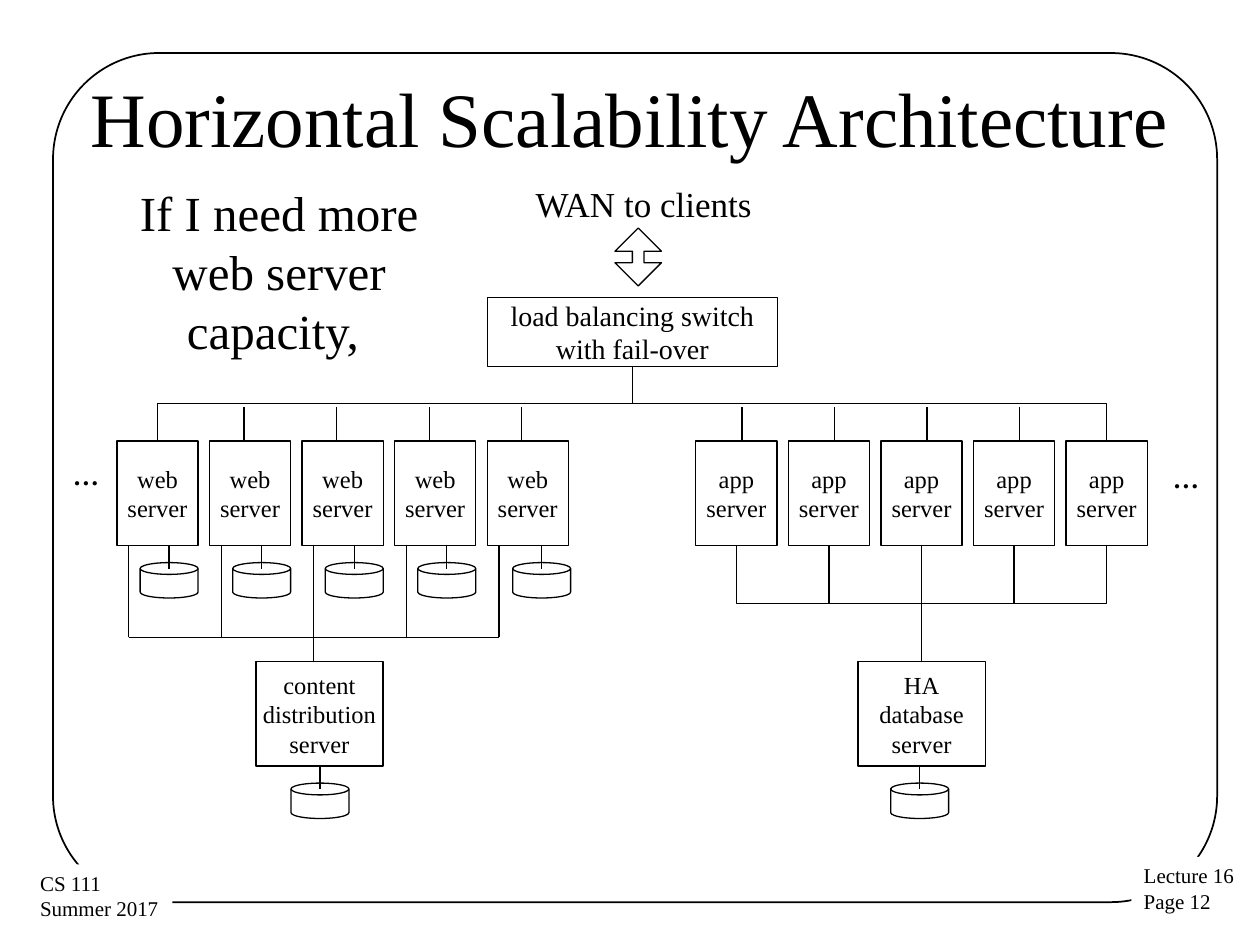
import pptx
import pptx.dml.color
import pptx.enum.shapes
import pptx.enum.text
import pptx.oxml.ns
import pptx.util
import lxml.etree
from dataclasses import dataclass

Pt = pptx.util.Pt
SHAPE = pptx.enum.shapes.MSO_SHAPE
CONNECTOR = pptx.enum.shapes.MSO_CONNECTOR
ALIGN = pptx.enum.text.PP_ALIGN
ANCHOR = pptx.enum.text.MSO_ANCHOR


@dataclass(frozen=True)
class Theme:
    font: str = "Times New Roman"
    ink: pptx.dml.color.RGBColor = pptx.dml.color.RGBColor(0, 0, 0)
    paper: pptx.dml.color.RGBColor = pptx.dml.color.RGBColor(255, 255, 255)
    title: float = 44
    remark: float = 28
    wan: float = 20
    switch: float = 16
    dots: float = 15
    server: float = 14
    footer: float = 12
    line: float = 0.75
    frame: float = 1


theme = Theme()
deck = pptx.Presentation()
deck.slide_width, deck.slide_height = Pt(720), Pt(540)
slide = deck.slides.add_slide(deck.slide_layouts[6])


def put(kind, left, top, width, height, lines=(), size=14, align=ALIGN.CENTER,
        anchor=ANCHOR.MIDDLE, line=theme.line, fill=None, wrap=False,
        bold=False, inset=(7.9, 4.1)):
    """Add a shape, or a text box when kind is None."""
    box = tuple(Pt(v) for v in (left, top, width, height))
    if kind is None:
        item = slide.shapes.add_textbox(*box)
    else:
        item = slide.shapes.add_shape(kind, *box)
        item.shadow.inherit = False
        if fill is None:
            item.fill.background()
        else:
            item.fill.solid()
            item.fill.fore_color.rgb = fill
        if line:
            item.line.color.rgb = theme.ink
            item.line.width = Pt(line)
        else:
            item.line.fill.background()
    if lines:
        frame = item.text_frame
        frame.word_wrap = wrap
        frame.vertical_anchor = anchor
        frame.margin_left = frame.margin_right = Pt(inset[0])
        frame.margin_top = frame.margin_bottom = Pt(inset[1])
        frame.text = "\n".join(lines)
        for paragraph in frame.paragraphs:
            paragraph.alignment = align
            paragraph.font.name = theme.font
            paragraph.font.size = Pt(size)
            paragraph.font.bold = bold
            paragraph.font.color.rgb = theme.ink
    return item


def link(x1, y1, x2, y2, bent=False):
    """Join two points; a bent link leaves and arrives vertically."""
    kind = CONNECTOR.STRAIGHT
    if bent:
        # Turn the end points back about the centre, as the link is rotated by 90°
        kind = CONNECTOR.ELBOW
        cx, cy = (x1 + x2) / 2, (y1 + y2) / 2
        x1, y1, x2, y2 = cx + y1 - cy, cy - x1 + cx, cx + y2 - cy, cy - x2 + cx
    connector = slide.shapes.add_connector(kind, Pt(x1), Pt(y1), Pt(x2), Pt(y2))
    connector.line.color.rgb = theme.ink
    connector.line.width = Pt(theme.line)
    properties = connector._element.spPr
    if bent:
        properties.find(pptx.oxml.ns.qn("a:xfrm")).set("rot", "5400000")
    lxml.etree.SubElement(properties, pptx.oxml.ns.qn("a:effectLst"))


# Frame and footers
page_frame = put(SHAPE.ROUNDED_RECTANGLE, 30.3, 30.3, 665.2, 485.2, line=theme.frame)
page_frame.adjustments[0] = 0.125
for left, top, width, lines in ((646.5, 489.6, 67, ("Lecture 16", "Page 12")),
                                (15.8, 493.9, 82.8, ("CS 111", "Summer 2017"))):
    put(SHAPE.RECTANGLE, left, top, width, 36.7, lines, theme.footer, ALIGN.LEFT,
        ANCHOR.TOP, line=None, fill=theme.paper, inset=(7.2, 3.6))

# Title and remark
put(None, 36, 21.6, 648, 90, ["Horizontal Scalability Architecture"], theme.title,
    wrap=True, inset=(7.2, 3.6))
put(None, 56.2, 100.8, 206.6, 108.7, ["If I need more web server capacity, "],
    theme.remark, anchor=ANCHOR.TOP, wrap=True, inset=(7.2, 3.6))

# Clients and load balancing switch
put(None, 298.1, 100.1, 140.4, 32.4, ["WAN to clients"], theme.wan, ALIGN.LEFT, ANCHOR.TOP)
wan_arrow = put(SHAPE.UP_DOWN_ARROW, 351.4, 130.3, 26.6, 33.1)
wan_arrow.adjustments[0], wan_arrow.adjustments[1] = 0.5, 0.249
put(SHAPE.RECTANGLE, 278.6, 169.9, 165.6, 39.6,
    ["load balancing switch", "with fail-over"], theme.switch)

# Server rows
pitch, server_width, server_height = 52.9, 46.4, 59.8
row_top, row_bottom = 252, 311.8
web_left = [66.8 + pitch * i for i in range(5)]
app_left = [397.6 + pitch * i for i in range(5)]
for role, lefts in (("web", web_left), ("app", app_left)):
    for left in lefts:
        put(SHAPE.RECTANGLE, left, row_top, server_width, server_height,
            [role, "server"], theme.server)
for left, top in ((662.4, 259.9), (33.8, 258.5)):
    put(None, left, top, 31.7, 26.6, ["…"], theme.dots, ALIGN.LEFT, ANCHOR.TOP, bold=True)

# Links from the switch to both rows
switch_x = 361.4
for outer_x in (web_left[0] + server_width / 2, app_left[-1] + server_width / 2):
    link(switch_x, 209.5, outer_x, row_top, bent=True)
for first_x in (139.5, 424):
    for i in range(4):
        link(first_x + pitch * i, row_top, first_x + pitch * i, 232.6)

# Back-end servers
back_top, back_bottom = 378, 437.8
for left, lines in ((146.2, ("content", "distribution", "server")),
                    (490.3, ("HA", "database", "server"))):
    put(SHAPE.RECTANGLE, left, back_top, 72.7, server_height, lines, theme.server)

# Disks below web servers and back-end servers
disk_width, disk_height = 33.1, 20.2
disks = [(left + 13.3, row_bottom) for left in web_left[:4]]
disks += [(293, row_bottom), (166.3, back_bottom), (509, back_bottom)]
for left, server_bottom in disks:
    disk_x = left + disk_width / 2
    put(SHAPE.FLOWCHART_MAGNETIC_DISK, left, server_bottom + 9.7, disk_width, disk_height)
    link(disk_x, server_bottom + 13.2, disk_x, server_bottom)

# Web servers to the content distribution server
content_bus_y = 364.3
web_drops = [left + 6.7 for left in web_left]
link(web_drops[0], content_bus_y, web_drops[-1], content_bus_y)
for x in web_drops:
    link(x, content_bus_y, x, row_bottom)
link(web_drops[2], back_top, web_drops[2], content_bus_y)

# App servers to the database server
app_centers = [left + server_width / 2 for left in app_left]
database_x = app_centers[2]
for x in app_centers:
    link(database_x, back_top, x, row_bottom, bent=x != database_x)

deck.save("out.pptx")
